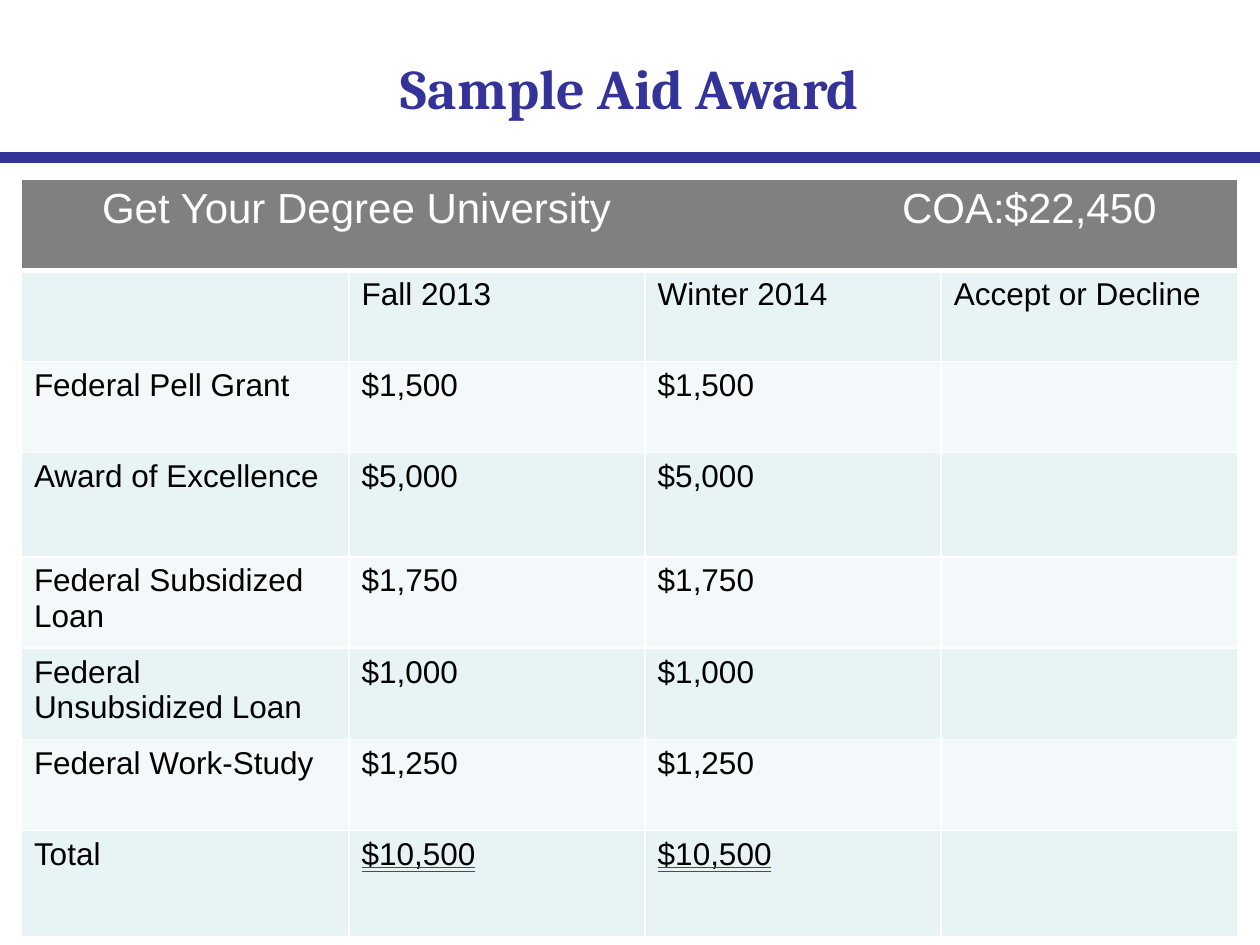
from lxml import etree
from pptx import Presentation
from pptx.dml.color import RGBColor
from pptx.enum.shapes import MSO_CONNECTOR
from pptx.enum.text import MSO_ANCHOR, MSO_UNDERLINE, PP_ALIGN
from pptx.oxml.ns import qn
from pptx.util import Inches, Pt

STRAIGHT = MSO_CONNECTOR.STRAIGHT
CENTER = PP_ALIGN.CENTER
MIDDLE = MSO_ANCHOR.MIDDLE
DOUBLE_LINE = MSO_UNDERLINE.DOUBLE_LINE

COLORS = {
    "navy": "333399", "header": "808080", "band_dark": "E7F3F4",
    "band_light": "F3F9FA", "white": "FFFFFF", "black": "000000",
    "underline": "FF0000",
}
COLUMN_WIDTHS = [26] + [23.5] * 3
ROW_HEIGHTS = [9.65] * 3 + [11.05] + [9.65] * 3 + [11.2]
AWARDS = [
    ("Federal Pell Grant", "$1,500"),
    ("Award of Excellence", "$5,000"),
    ("Federal Subsidized Loan", "$1,750"),
    ("Federal Unsubsidized Loan", "$1,000"),
    ("Federal Work-Study", "$1,250"),
    ("Total", "$10,500"),
]


def add_solid_fill(parent, color):
    fill = etree.SubElement(parent, qn("a:solidFill"))
    etree.SubElement(fill, qn("a:srgbClr"), val=COLORS[color])


class SlideBuilder:
    """Draws on one slide; lengths are percentages of the slide's size."""

    def __init__(self, presentation):
        self.width = presentation.slide_width
        self.height = presentation.slide_height
        self.slide = presentation.slides.add_slide(presentation.slide_layouts[6])

    def across(self, percent):
        return round(self.width * percent / 100)

    def down(self, percent):
        return round(self.height * percent / 100)

    def format_text(self, paragraph, size, color, font="Arial", bold=False):
        for run in paragraph.runs:
            run.font.size = Pt(size)
            run.font.bold = bold
            run.font.name = font
            run.font.color.rgb = RGBColor.from_string(COLORS[color])

    def title(self, text, left, top, width, height):
        box = self.slide.shapes.add_textbox(
            self.across(left), self.down(top), self.across(width), self.down(height))
        frame = box.text_frame
        frame.word_wrap = True
        frame.vertical_anchor = MIDDLE
        frame.text = text
        frame.paragraphs[0].alignment = CENTER
        self.format_text(frame.paragraphs[0], 32, "navy", "Cambria", True)

    def rule(self, top, weight):
        y = self.down(top)
        line = self.slide.shapes.add_connector(STRAIGHT, 0, y, self.width, y)
        line.line.color.rgb = RGBColor.from_string(COLORS["navy"])
        line.line.width = Pt(weight)
        etree.SubElement(line._element.spPr, qn("a:effectLst"))

    def table(self, left, top, column_widths, row_heights):
        table = self.slide.shapes.add_table(
            len(row_heights), len(column_widths), self.across(left), self.down(top),
            self.across(sum(column_widths)), self.down(sum(row_heights))).table
        for column, width in zip(table.columns, column_widths):
            column.width = self.across(width)
        for row, height in zip(table.rows, row_heights):
            row.height = self.down(height)
        return table

    def cell(self, cell, text, fill, size=18, color="black", bottom=1):
        properties = cell._tc.get_or_add_tcPr()
        for side, weight in (("L", 1), ("R", 1), ("T", 1), ("B", bottom)):
            border = etree.SubElement(properties, qn(f"a:ln{side}"), w=str(Pt(weight)))
            add_solid_fill(border, "white")
        cell.fill.solid()
        cell.fill.fore_color.rgb = RGBColor.from_string(COLORS[fill])
        paragraph = cell.text_frame.paragraphs[0]
        paragraph.text = text
        self.format_text(paragraph, size, color)

    def header(self, table, name, cost, indent, tab):
        """Fill the merged top row, with the cost set at a tab stop."""
        first = table.cell(0, 0)
        first.merge(table.cell(0, len(table.columns) - 1))
        first.margin_left = self.across(indent)
        paragraph = first.text_frame.paragraphs[0]
        stops = etree.SubElement(paragraph._p.get_or_add_pPr(), qn("a:tabLst"))
        etree.SubElement(stops, qn("a:tab"), pos=str(self.across(tab)), algn="l")
        self.cell(first, f"{name}\t{cost}", "header", 24, "white", 3)

    def underline(self, cell):
        run = cell.text_frame.paragraphs[0].runs[0]
        run.font.underline = DOUBLE_LINE
        properties = run.font._element
        fill = etree.Element(qn("a:uFill"))
        add_solid_fill(fill, "underline")
        properties.find(qn("a:latin")).addprevious(fill)


def main():
    presentation = Presentation()
    presentation.slide_width = Inches(10)
    presentation.slide_height = Inches(7.5)
    builder = SlideBuilder(presentation)

    builder.rule(16.67, 6)
    builder.title("Sample Aid Award", 5, 4, 90, 10.4)

    table = builder.table(1.7, 18.95, COLUMN_WIDTHS, ROW_HEIGHTS)
    builder.header(table, "Get Your Degree University", "COA:$22,450", 6.4, 63.5)
    rows = [("", "Fall 2013", "Winter 2014", "Accept or Decline")]
    rows += [(award, amount, amount, "") for award, amount in AWARDS]
    for row, texts in enumerate(rows, start=1):
        band = "band_dark" if row % 2 else "band_light"
        for column, text in enumerate(texts):
            builder.cell(table.cell(row, column), text, band)
    for column in (1, 2):
        builder.underline(table.cell(len(rows), column))

    presentation.save("out.pptx")


if __name__ == "__main__":
    main()
